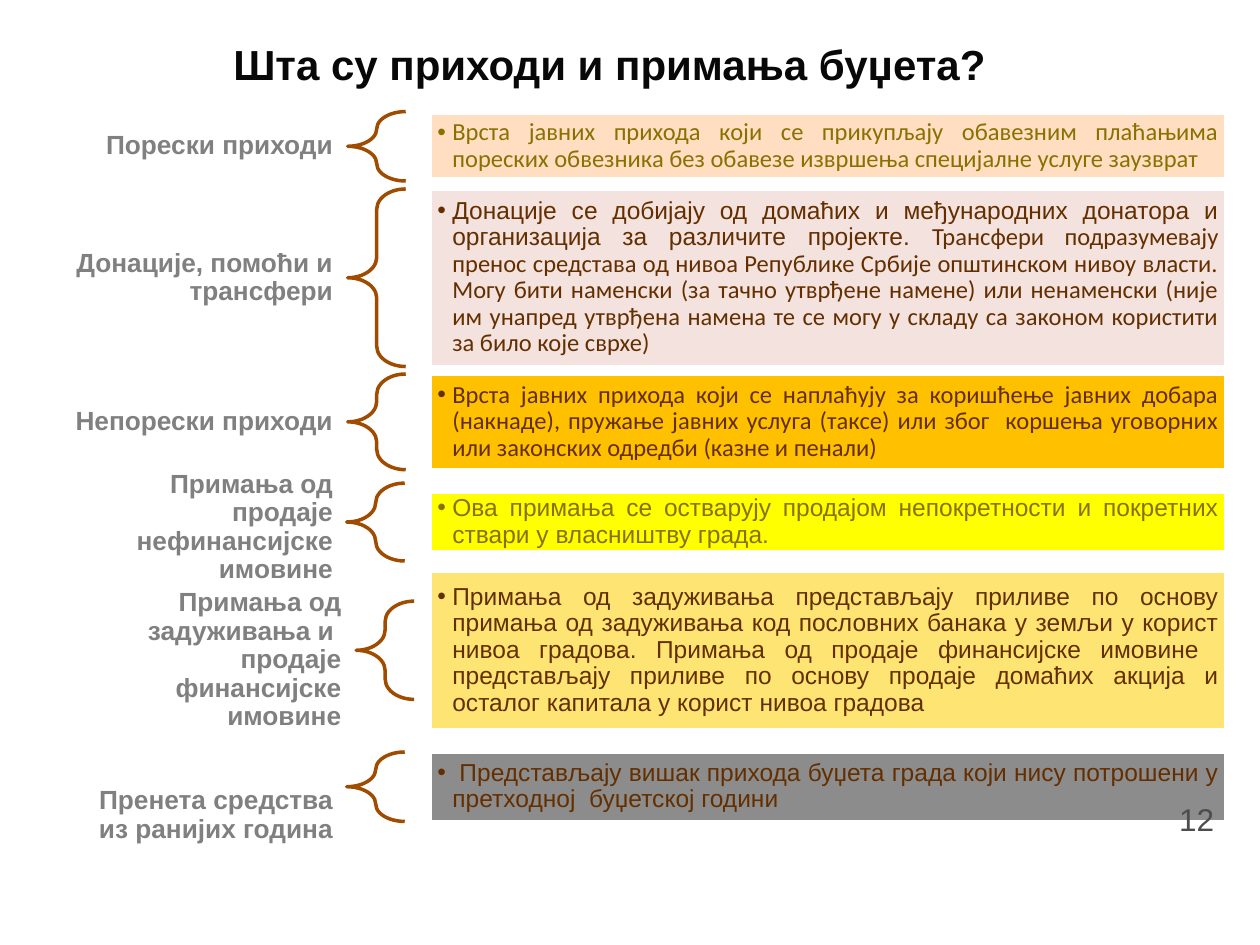
from lxml.etree import SubElement
from pptx import Presentation
from pptx.dml.color import RGBColor
from pptx.enum.shapes import MSO_SHAPE as Shape
from pptx.enum.text import MSO_ANCHOR as Anchor, PP_ALIGN as Align
from pptx.oxml.ns import qn
from pptx.util import Cm, Pt

BROWN, OLIVE = "642F00", "897101"
LEFT, WIDTH = 1.12, 23.6
LABEL_W, BRACE_W, NOTE_W = 5.89, 1.17, 16.05

# Each row: top, height, brace height, left shift, label drop, fill, ink, label, note runs
ROWS = [
    (2.29, 1.32, 1.4, 0, 0, "FFDEC1", OLIVE, "Порески приходи",
     [("Calibri", "Врста јавних прихода који се прикупљају обавезним плаћањима "
       "пореских обвезника без обавезе извршења специјалне услуге заузврат")]),
    (3.81, 3.58, 3.58, 0, 0, "F3E2DD", BROWN, "Донације, помоћи и трансфери",
     [("Arial", "Донације се добијају од домаћих и међународних донатора и "
       "организација за различите пројекте. "),
      ("Calibri", "Трансфери подразумевају пренос средстава од нивоа Републике "
       "Србије општинском нивоу власти. Могу бити наменски (за тачно утврђене "
       "намене) или ненаменски (није им унапред утврђена намена те се могу у "
       "складу са законом користити за било које сврхе)")]),
    (7.54, 1.93, 1.93, 0, 0, "FFC000", BROWN, "Непорески приходи",
     [("Calibri", "Врста јавних прихода који се наплаћују за коришћење јавних "
       "добара (накнаде), пружање јавних услуга (таксе) или због  коршења "
       "уговорних или законских одредби (казне и пенали)")]),
    (9.93, 1.19, 1.57, -0.02, 0.11, "FFFF00", OLIVE,
     "Примања од продаје нефинансијске имовине",
     [("Arial", "Ова примања се остварују продајом непокретности и покретних "
       "ствари у власништву града.")]),
    (11.51, 3.2, 1.98, 0.17, 0.2, "FEE573", BROWN,
     "Примања од задуживања и  продаје финансијске имовине",
     [("Arial", "Примања од задуживања представљају приливе по основу примања од "
       "задуживања код пословних банака у земљи у корист нивоа градова. Примања "
       "од продаје финансијске имовине  представљају приливе по основу продаје "
       "домаћих акција и осталог капитала у корист нивоа градова")]),
    (15.16, 1.4, 1.4, -0.02, 0.58, "8C8C8C", BROWN,
     "Пренета средства из ранијих година",
     [("Arial", " Представљају вишак прихода буџета града који нису потрошени у "
       "претходној  буџетској години")]),
]


def tint(color, code):
    """Set a colour from a hex string."""
    color.rgb = RGBColor.from_string(code)


def write(para, text, face, size, code, bold=False):
    """Add one formatted run to a paragraph."""
    run = para.add_run()
    run.text = text
    run.font.name, run.font.size, run.font.bold = face, Pt(size), bold
    tint(run.font.color, code)


def frame_up(shape, side, edge, align):
    """Prepare a middle-anchored text frame and return its first paragraph."""
    frame = shape.text_frame
    frame.word_wrap = True
    frame.vertical_anchor = Anchor.MIDDLE
    frame.margin_left = frame.margin_right = Cm(side)
    frame.margin_top = frame.margin_bottom = Cm(edge)
    para = frame.paragraphs[0]
    para.alignment, para.line_spacing = align, 0.9
    return para


def bullet(para, indent):
    """Give a paragraph a hanging round bullet."""
    props = para._p.get_or_add_pPr()
    props.set("marL", str(Cm(indent)))
    props.set("indent", str(-Cm(indent)))
    SubElement(props, qn("a:buFont")).set("typeface", "Arial")
    SubElement(props, qn("a:buChar")).set("char", "•")


def add_form(slide, kind, box, line):
    """Add an unshadowed preset shape with a coloured outline."""
    form = slide.shapes.add_shape(kind, *map(Cm, box))
    form.shadow.inherit = False
    form.line.width = Pt(2)
    tint(form.line.color, line)
    return form


def add_title(slide, box, text):
    """Place and fill the title placeholder."""
    title = slide.shapes.title
    title.left, title.top, title.width, title.height = map(Cm, box)
    para = frame_up(title, 0.25, 0.13, Align.RIGHT)
    para.line_spacing = 1.0
    write(para, text, "Arial", 24, "080808", True)


def add_row(slide, box, span, shift, drop, fill, ink, label, notes):
    """Draw a label, a brace and a filled note, centred in the row box."""
    left, top, width, height = box
    mid = top + height / 2
    tall = 2.6
    name = slide.shapes.add_textbox(
        Cm(left + max(shift, 0)), Cm(mid + drop - tall / 2), Cm(LABEL_W), Cm(tall))
    para = frame_up(name, 0.3, 0.1, Align.RIGHT)
    write(para, label, "Arial", 15, "808080", True)

    brace = add_form(slide, Shape.LEFT_BRACE,
                     (left + LABEL_W + shift, mid - span / 2, BRACE_W, span), "9F4B00")
    brace.fill.background()
    brace.adjustments[0] = 0.35

    note = add_form(slide, Shape.RECTANGLE,
                    (left + width - NOTE_W, top, NOTE_W, height), "FFFFFF")
    note.fill.solid()
    tint(note.fill.fore_color, fill)
    para = frame_up(note, 0.15, 0.15, Align.JUSTIFY)
    bullet(para, 0.3)
    for face, text in notes:
        write(para, text, face, 14, ink)


def add_page(slide, box, text):
    """Write the page number."""
    page = slide.shapes.add_textbox(*map(Cm, box))
    page.text_frame.word_wrap = True
    write(page.text_frame.paragraphs[0], text, "Arial", 18, "4D4D4D")


def main():
    """Build and save the slide."""
    deck = Presentation()
    deck.slide_width, deck.slide_height = Cm(25.4), Cm(19.05)
    slide = deck.slides.add_slide(deck.slide_layouts[5])
    add_title(slide, (2.54, 0.64, 17.58, 1.27), "Шта су приходи и примања буџета?")
    for top, height, *rest in ROWS:
        add_row(slide, (LEFT, top, WIDTH, height), *rest)
    add_page(slide, (23.52, 16, 1.88, 1.4), "12")
    deck.save("out.pptx")


if __name__ == "__main__":
    main()
